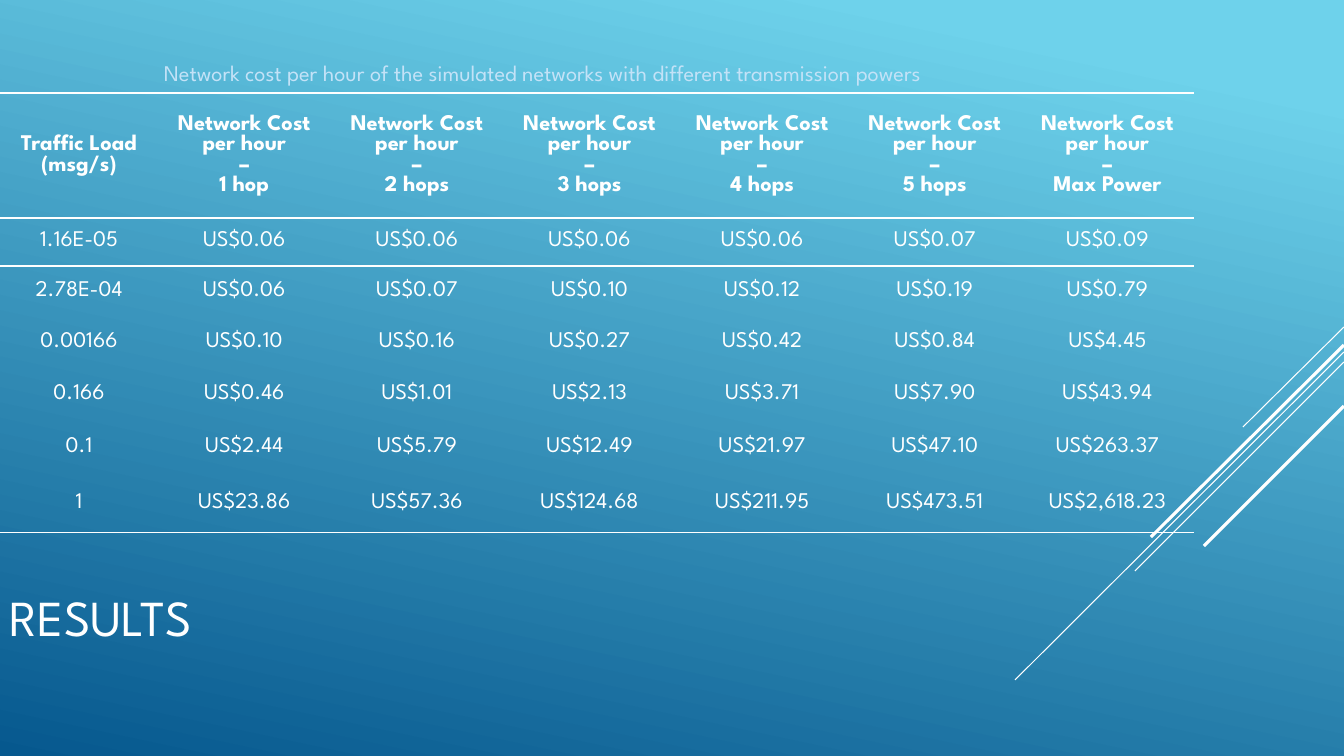
from lxml.etree import SubElement
from pptx import Presentation
from pptx.dml.color import RGBColor
from pptx.enum.shapes import MSO_CONNECTOR as Connector
from pptx.enum.text import MSO_ANCHOR as Anchor, PP_ALIGN as Align
from pptx.oxml import parse_xml
from pptx.oxml.ns import nsdecls, qn
from pptx.util import Emu, Pt

WHITE = RGBColor(0xFF, 0xFF, 0xFF)
PALE_BLUE = RGBColor(0xC3, 0xE2, 0xF7)
SKY = RGBColor(0x6E, 0xD2, 0xEB)
DEEP_BLUE = RGBColor(0x06, 0x58, 0x8E)

PLAIN_TABLE_STYLE = "{2D5ABB26-0587-4C30-8999-92F81FD0307C}"
ROW_HEIGHTS = [125, 48, 52, 51, 53, 53, 58]
HOPS = ["1 hop", "2 hops", "3 hops", "4 hops", "5 hops", "Max Power"]
COSTS = [
    ("1.16E-05", ["0.06", "0.06", "0.06", "0.06", "0.07", "0.09"]),
    ("2.78E-04", ["0.06", "0.07", "0.10", "0.12", "0.19", "0.79"]),
    ("0.00166", ["0.10", "0.16", "0.27", "0.42", "0.84", "4.45"]),
    ("0.166", ["0.46", "1.01", "2.13", "3.71", "7.90", "43.94"]),
    ("0.1", ["2.44", "5.79", "12.49", "21.97", "47.10", "263.37"]),
    ("1", ["23.86", "57.36", "124.68", "211.95", "473.51", "2,618.23"]),
]
# Start and end of each diagonal, with its width in points
DIAGONALS = [
    (1344, 327, 1243, 427, 0.75),
    (1344, 352, 1015, 680, 0.75),
    (1344, 362, 1135, 571, 0.75),
    (1344, 345, 1151, 537, 2.25),
    (1344, 406, 1204, 546, 2.25),
]


def px(length):
    """Turn pixels (100.8 to the inch) into EMU."""
    return Emu(round(length * 914400 / 100.8))


class SlideBuilder:
    font_name = "League Spartan"

    def __init__(self, slide):
        self.slide = slide

    def background(self, start, end, angle):
        fill = self.slide.background.fill
        fill.gradient()
        fill.gradient_angle = angle
        for stop, color, position in zip(fill.gradient_stops, (start, end), (0.1, 1)):
            stop.color.rgb = color
            stop.position = position

    def style(self, paragraph, size, color, bold=False):
        font = paragraph.font
        font.name, font.size, font.bold = self.font_name, Pt(size), bold
        font.color.rgb = color

    def text(self, words, left, top, width, height, size, color):
        box = self.slide.shapes.add_textbox(px(left), px(top), px(width), px(height))
        frame = box.text_frame
        frame.word_wrap = True
        frame.vertical_anchor = Anchor.MIDDLE
        frame.text = words
        self.style(frame.paragraphs[0], size, color)

    def line(self, x1, y1, x2, y2, width):
        line = self.slide.shapes.add_connector(
            Connector.STRAIGHT, px(x1), px(y1), px(x2), px(y2))
        line.line.color.rgb = WHITE
        line.line.width = Pt(width)
        SubElement(line._element.spPr, qn("a:effectLst"))

    def table(self, rows, left, top, width, first_width, heights):
        """Draw rows of text with rules around the header, the first row and the foot."""
        column_count = len(rows[0])
        table = self.slide.shapes.add_table(
            len(rows), column_count, px(left), px(top), px(width), px(sum(heights))).table
        table.first_row = table.horz_banding = False
        table._tbl.tblPr.find(qn("a:tableStyleId")).text = PLAIN_TABLE_STYLE
        for index, column in enumerate(table.columns):
            column.width = px((width - first_width) / (column_count - 1) if index else first_width)
        for index, (words, height) in enumerate(zip(rows, heights)):
            table.rows[index].height = px(height)
            sides = ["T"] if index <= 1 else []
            if index in (0, 1, len(rows) - 1):
                sides.append("B")
            for cell, cell_words in zip(table.rows[index].cells, words):
                self.cell(cell, cell_words, sides, header=index == 0)

    def cell(self, cell, words, sides, header):
        cell.margin_left = cell.margin_right = px(7)
        cell.margin_top = cell.margin_bottom = 0
        cell.vertical_anchor = Anchor.MIDDLE
        cell.fill.background()
        cell.text = words
        for paragraph in cell.text_frame.paragraphs:
            self.style(paragraph, 16, WHITE, bold=header)
            paragraph.alignment = Align.CENTER
            if not header:
                paragraph.line_spacing = Pt(13)
        properties = cell._tc.get_or_add_tcPr()
        for position, side in enumerate(sides):
            properties.insert(position, parse_xml(
                f'<a:ln{side} {nsdecls("a")} w="{Pt(1)}"><a:solidFill>'
                f'<a:srgbClr val="{WHITE}"/></a:solidFill></a:ln{side}>'))


def main():
    presentation = Presentation()
    presentation.slide_width, presentation.slide_height = px(1344), px(756)
    builder = SlideBuilder(presentation.slides.add_slide(presentation.slide_layouts[6]))

    builder.background(SKY, DEEP_BLUE, angle=258)
    for diagonal in DIAGONALS:
        builder.line(*diagonal)
    builder.text("RESULTS", 0, 533, 940, 166, 36, WHITE)

    header = ["Traffic Load (msg/s)"] + [f"Network Cost per hour\n–\n{hop}" for hop in HOPS]
    body = [[load] + [f"US${cost}" for cost in costs] for load, costs in COSTS]
    builder.table([header] + body, 0, 93, 1194, 158, ROW_HEIGHTS)

    builder.text("Network cost per hour of the simulated networks with different transmission powers",
                 154, 51, 917, 44, 16, PALE_BLUE)
    presentation.save("out.pptx")


if __name__ == "__main__":
    main()
